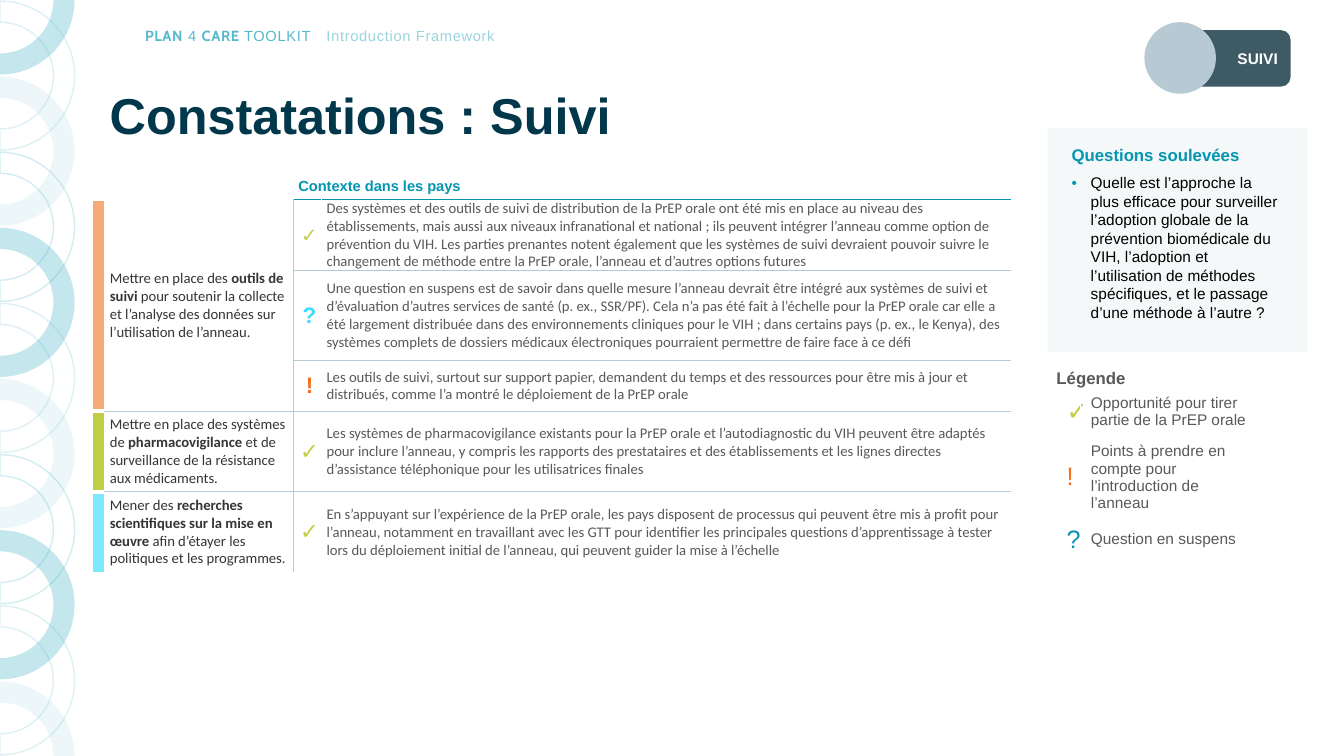
import math
from dataclasses import dataclass, replace

import lxml.etree
import pptx
import pptx.dml.color
import pptx.enum.shapes
import pptx.enum.text
import pptx.oxml.ns
import pptx.util

PX = 9144
ALIGN = pptx.enum.text.PP_ALIGN
ANCHOR = pptx.enum.text.MSO_ANCHOR
SHAPE = pptx.enum.shapes.MSO_SHAPE


@dataclass(frozen=True)
class Style:
    size: float
    color: str
    bold: bool = False
    font: str = "Arial"
    spacing: int = 0


class Theme:
    white, black, navy, slate = "FFFFFF", "000000", "00374B", "3E5A65"
    mist, panel, grey, ink = "B7CAD3", "DBE5E9", "595959", "353535"
    teal, ring, pale_ring = "0495B0", "56B9CC", "9AD5E0"
    lime, orange, cyan = "C2CD46", "F4701E", "3DDDFB"
    peach, sky = "F8A978", "7EE8FC"
    title = Style(36, navy, True)
    heading = Style(12, teal, True)
    question = Style(11, black)
    legend_heading = Style(12, grey, True)
    legend = Style(11, grey)
    badge = Style(11, white, True)
    table_heading = Style(10.5, teal, True)
    topic = Style(10.5, ink, font="Calibri")
    topic_bold = replace(topic, bold=True)
    finding = Style(10.5, grey, font="Calibri")
    toolkit = Style(10.5, ring, spacing=50)
    toolkit_bold = Style(10.5, ring, True, "Cabin", 50)
    framework = Style(10.5, pale_ring, spacing=50)


def px(value):
    return round(value * PX)


def rgb(color):
    return pptx.dml.color.RGBColor.from_string(color)


def xml_child(parent, tag, **attributes):
    return lxml.etree.SubElement(parent, pptx.oxml.ns.qn(tag), attributes)


def write(paragraph, *runs, align=ALIGN.LEFT):
    paragraph.alignment = align
    for text, style in runs:
        for index, line in enumerate(text.split("\n")):
            if index:
                paragraph.add_line_break()
            run = paragraph.add_run()
            run.text = line
            run.font.size = pptx.util.Pt(style.size)
            run.font.name = style.font
            run.font.bold = style.bold
            run.font.color.rgb = rgb(style.color)
            if style.spacing:
                run.font._element.set("spc", str(style.spacing))


def hang(paragraph, bullet=None):
    properties = paragraph._p.get_or_add_pPr()
    properties.set("marL", str(px(19)))
    properties.set("indent", str(px(-19)))
    if bullet:
        xml_child(xml_child(properties, "a:buClr"), "a:srgbClr", val=Theme.teal)
        xml_child(properties, "a:buFont", typeface="Arial")
        xml_child(properties, "a:buChar", char=bullet)


def add_text(slide, box, *runs, wrap=True, anchor=ANCHOR.TOP):
    frame = slide.shapes.add_textbox(*map(px, box)).text_frame
    frame.word_wrap = wrap
    frame.vertical_anchor = anchor
    write(frame.paragraphs[0], *runs)
    return frame


def paint(shape, fill=None, line=None, opacity=100):
    shape.shadow.inherit = False
    for target, color in ((shape.fill, fill), (shape.line.fill, line)):
        if color:
            target.solid()
            target.fore_color.rgb = rgb(color)
        else:
            target.background()
    if line:
        shape.line.width = pptx.util.Pt(1)
    if opacity < 100:
        for color in list(shape._element.spPr.iter(pptx.oxml.ns.qn("a:srgbClr"))):
            xml_child(color, "a:alpha", val=str(opacity * 1000))


def add_shape(slide, kind, box, fill, opacity=100):
    shape = slide.shapes.add_shape(kind, *map(px, box))
    paint(shape, fill, opacity=opacity)
    return shape


def add_half_ring(slide, center_y, angles, **look):
    corners = [(74, angle) for angle in angles] + [(53, angle) for angle in reversed(angles)]
    points = [(px(radius * math.cos(math.radians(angle))),
               px(center_y + radius * math.sin(math.radians(angle)))) for radius, angle in corners]
    builder = slide.shapes.build_freeform(*points[0], scale=1.0)
    builder.add_line_segments(points[1:], close=True)
    shape = builder.convert_to_shape()
    segments = list(shape._element.spPr.iter(pptx.oxml.ns.qn("a:lnTo")))
    for segment, (radius, begin), (_, end) in zip(segments, corners, corners[1:]):
        if begin != end:
            outline = segment.getparent()
            arc = xml_child(outline, "a:arcTo", wR=str(px(radius)), hR=str(px(radius)),
                            stAng=str(begin % 360 * 60000), swAng=str((end - begin) * 60000))
            outline.replace(segment, arc)
    paint(shape, **look)


def add_rings(slide):
    looks = [dict(fill=Theme.ring, opacity=35), dict(line=Theme.ring, opacity=20),
             dict(fill=Theme.ring, opacity=10), dict(line=Theme.ring, opacity=25)]
    clipped = {0: [0, 90], 10: [-90, 0]}
    for index in range(11):
        add_half_ring(slide, 75 * index, clipped.get(index, [-90, 0, 90]), **looks[index % 4])


def add_table(slide, left, top, columns, rows):
    table = slide.shapes.add_table(len(rows), len(columns), px(left), px(top),
                                   px(sum(columns)), px(sum(rows))).table
    table.first_row = table.horz_banding = False
    for column, width in zip(table.columns, columns):
        column.width = px(width)
    for row, height in zip(table.rows, rows):
        row.height = px(height)
    for cell in table.iter_cells():
        cell.fill.background()
        cell.vertical_anchor = ANCHOR.MIDDLE
    return table


def horizontal_edge(edge, column):
    if edge in (0, 6):
        return None
    if column == 0:
        return Theme.white, 3
    if edge == 1:
        return (Theme.teal, 1) if column > 1 else (Theme.white, 3)
    return None if column == 1 and edge < 4 else (Theme.mist, 1)


def vertical_edge(edge, row):
    return (Theme.mist, 1) if row and edge == 2 else None


def set_borders(cell, row, column):
    height = cell.span_height if cell.is_merge_origin else 1
    edges = {"L": vertical_edge(column, row), "R": vertical_edge(column + 1, row),
             "T": horizontal_edge(row, column), "B": horizontal_edge(row + height, column)}
    properties = cell._tc.get_or_add_tcPr()
    visible = [(side, look) for side, look in edges.items() if look]
    for index, (side, (color, width)) in enumerate(visible):
        line = xml_child(properties, f"a:ln{side}", w=str(int(pptx.util.Pt(width))))
        properties.insert(index, line)
        xml_child(xml_child(line, "a:solidFill"), "a:srgbClr", val=color)


def add_findings(slide):
    check = [("✓", Style(16, Theme.lime, True))]
    small_check = [("✓", Style(14, Theme.lime, True)), (" ", Style(16, Theme.grey, True))]
    question = [("?", Style(16, Theme.cyan, True))]
    warning = [("!", Style(16, Theme.orange, True))]
    topics = {
        1: (Theme.peach, "Mettre en place des ", "outils de suivi",
            " pour soutenir la collecte et l’analyse des données sur l’utilisation de l’anneau."),
        4: (Theme.lime, "Mettre en place des systèmes de ", "pharmacovigilance",
            " et de surveillance de la résistance aux médicaments."),
        5: (Theme.sky, "Mener des ", "recherches scientifiques sur la mise en œuvre ",
            "afin d’étayer les politiques et les programmes."),
    }
    findings = [
        (small_check, "Des systèmes et des outils de suivi de distribution de la PrEP orale ont été mis en place au niveau des établissements, mais aussi aux niveaux infranational et national ; ils peuvent intégrer l’anneau comme option de prévention du VIH. Les parties prenantes notent également que les systèmes de suivi devraient pouvoir suivre le changement de méthode entre la PrEP orale, l’anneau et d’autres options futures"),
        (question, "Une question en suspens est de savoir dans quelle mesure l’anneau devrait être intégré aux systèmes de suivi et d’évaluation d’autres services de santé (p. ex., SSR/PF). Cela n’a pas été fait à l’échelle pour la PrEP orale car elle a été largement distribuée dans des environnements cliniques pour le VIH ; dans certains pays (p. ex., le Kenya), des systèmes complets de dossiers médicaux électroniques pourraient permettre de faire face à ce défi"),
        (warning, "Les outils de suivi, surtout sur support papier, demandent du temps et des ressources pour être mis à jour et distribués, comme l’a montré le déploiement de la PrEP orale"),
        (check, "Les systèmes de pharmacovigilance existants pour la PrEP orale et l’autodiagnostic du VIH peuvent être adaptés pour inclure l’anneau, y compris les rapports des prestataires et des établissements et les lignes directes d’assistance téléphonique pour les utilisatrices finales"),
        (check, "En s’appuyant sur l’expérience de la PrEP orale, les pays disposent de processus qui peuvent être mis à profit pour l’anneau, notamment en travaillant avec les GTT pour identifier les principales questions d’apprentissage à tester lors du déploiement initial de l’anneau, qui peuvent guider la mise à l’échelle"),
    ]
    table = add_table(slide, 92, 171, [12, 187, 28, 683], [27, 70, 90, 50, 80, 80])
    for first, last in (((0, 0), (0, 1)), ((0, 2), (0, 3)), ((1, 0), (3, 0)), ((1, 1), (3, 1))):
        table.cell(*first).merge(table.cell(*last))
    write(table.cell(0, 2).text_frame.paragraphs[0], ("Contexte dans les pays", Theme.table_heading))
    for row, (color, before, key, after) in topics.items():
        table.cell(row, 0).fill.solid()
        table.cell(row, 0).fill.fore_color.rgb = rgb(color)
        write(table.cell(row, 1).text_frame.paragraphs[0], (before, Theme.topic),
              (key, Theme.topic_bold), (after, Theme.topic))
    for row, (icon, text) in enumerate(findings, 1):
        write(table.cell(row, 2).text_frame.paragraphs[0], *icon, align=ALIGN.CENTER)
        write(table.cell(row, 3).text_frame.paragraphs[0], (text, Theme.finding))
    for index, cell in enumerate(table.iter_cells()):
        cell.margin_left, cell.margin_right = px(5), px(1)
        cell.margin_top = cell.margin_bottom = 0
        set_borders(cell, *divmod(index, 4))
        if not cell.text_frame.text:
            xml_child(cell.text_frame.paragraphs[0]._p, "a:endParaRPr", sz="800")


def add_legend(slide):
    entries = [("✓", Theme.lime, "Opportunité pour tirer \npartie de la PrEP orale"),
               ("!", Theme.orange, "Points à prendre en compte pour l’introduction de l’anneau"),
               ("?", Theme.teal, "Question en suspens")]
    table = add_table(slide, 1048, 385, [23, 175], [46, 82, 39])
    for row, (icon, color, text) in enumerate(entries):
        write(table.cell(row, 0).text_frame.paragraphs[0], (icon, Style(18, color)), align=ALIGN.CENTER)
        write(table.cell(row, 1).text_frame.paragraphs[0], (text, Theme.legend))
    hang(table.cell(0, 0).text_frame.paragraphs[0])
    add_text(slide, (1038, 360, 115, 31), ("Légende", Theme.legend_heading))


def add_questions(slide):
    add_shape(slide, SHAPE.RECTANGLE, (1039, 127, 258, 222), Theme.panel, 25)
    frame = add_text(slide, (1053, 137, 227, 190), ("Questions soulevées", Theme.heading))
    frame.paragraphs[0].line_spacing = 1.1
    paragraph = frame.add_paragraph()
    write(paragraph, ("Quelle est l’approche la plus efficace pour surveiller l’adoption globale de la prévention biomédicale du VIH, l’adoption et l’utilisation de méthodes spécifiques, et le passage d’une méthode à l’autre ?", Theme.question))
    for item in frame.paragraphs:
        item.space_after = pptx.util.Pt(6)
    hang(paragraph, "•")


def add_badge(slide):
    badge = add_shape(slide, SHAPE.ROUNDED_RECTANGLE, (1161, 30, 119, 56), Theme.slate)
    badge.text_frame.vertical_anchor = ANCHOR.MIDDLE
    write(badge.text_frame.paragraphs[0], ("SUIVI", Theme.badge), align=ALIGN.RIGHT)
    add_shape(slide, SHAPE.OVAL, (1135, 22, 71, 71), Theme.mist)


def main():
    presentation = pptx.Presentation()
    presentation.slide_width, presentation.slide_height = px(1333), px(750)
    slide = presentation.slides.add_slide(presentation.slide_layouts[6])
    add_text(slide, (134, 22, 184, 28), ("PLAN", Theme.toolkit_bold), (" 4 ", Theme.toolkit),
             ("CARE ", Theme.toolkit_bold), ("TOOLKIT", Theme.toolkit), wrap=False)
    add_text(slide, (314, 22, 417, 28), ("Introduction Framework", Theme.framework))
    add_rings(slide)
    title = add_text(slide, (99, 89, 1107, 56), ("Constatations : Suivi", Theme.title), anchor=ANCHOR.MIDDLE)
    title.paragraphs[0].line_spacing = 0.9
    add_questions(slide)
    add_legend(slide)
    add_badge(slide)
    add_findings(slide)
    presentation.save("out.pptx")


if __name__ == "__main__":
    main()
